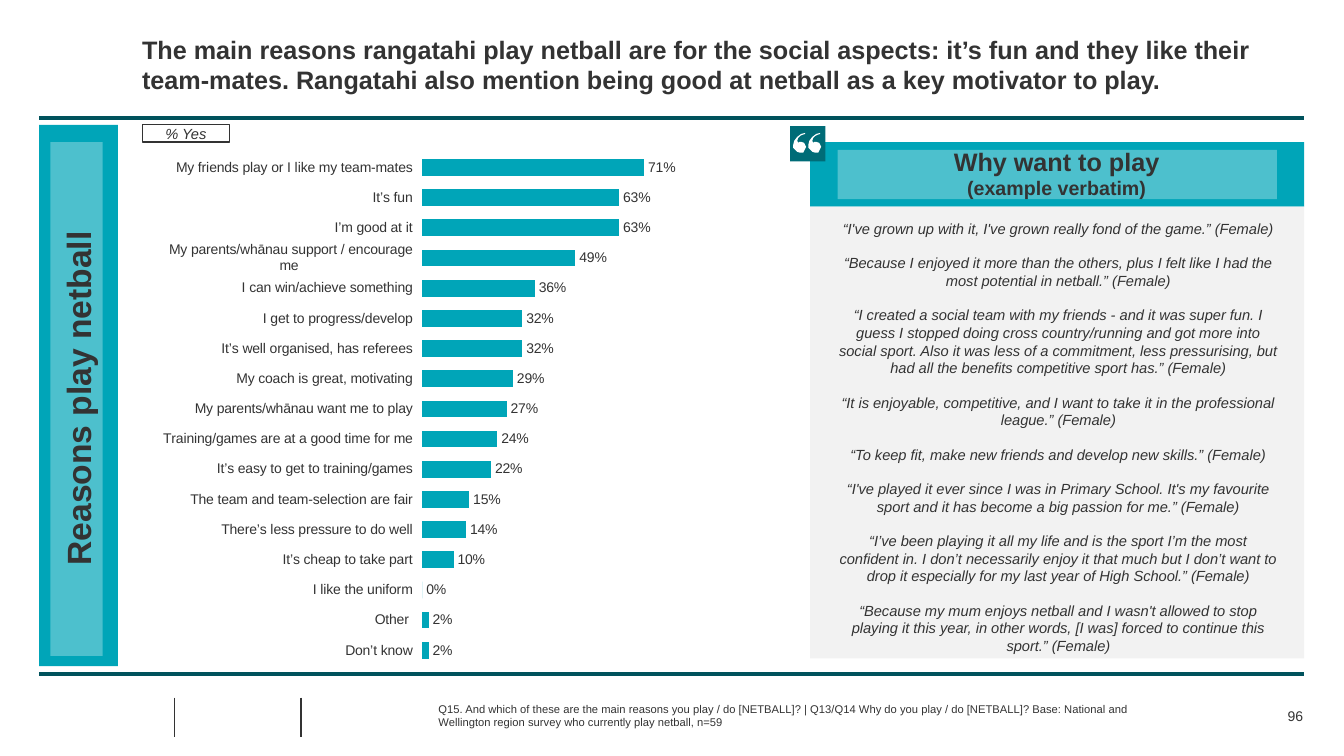
from dataclasses import dataclass
from typing import Any

from lxml import etree
from pptx import Presentation
from pptx.chart.data import CategoryChartData
from pptx.dml.color import RGBColor
from pptx.enum.chart import XL_CHART_TYPE, XL_LABEL_POSITION, XL_TICK_LABEL_POSITION, XL_TICK_MARK
from pptx.enum.shapes import MSO_CONNECTOR, MSO_SHAPE
from pptx.enum.text import MSO_ANCHOR, PP_ALIGN
from pptx.oxml import parse_xml
from pptx.oxml.ns import nsdecls, qn
from pptx.util import Cm, Pt

RECT = MSO_SHAPE.RECTANGLE
STRAIGHT = MSO_CONNECTOR.STRAIGHT
TOP, MIDDLE = MSO_ANCHOR.TOP, MSO_ANCHOR.MIDDLE
LEFT, CENTER, RIGHT = PP_ALIGN.LEFT, PP_ALIGN.CENTER, PP_ALIGN.RIGHT

FONT = "Arial"
HUES = {"ink": "333333", "teal": "00A5B8", "dark": "00525C", "badge": "006C77",
        "panel": "F2F2F2", "white": "FFFFFF"}


@dataclass
class Box:
    x: float
    y: float
    w: float
    h: float
    fill: str = ""
    alpha: int = 100


@dataclass
class Rule:
    x1: float
    y1: float
    x2: float
    y2: float
    hue: str
    width: float


@dataclass
class Line:
    text: str
    size: float
    bold: bool = False
    italic: bool = False


@dataclass
class Label:
    box: Box
    lines: list[Line]
    align: Any = CENTER
    anchor: Any = TOP
    gap: float = 0
    turn: int = 0


RULES = [
    Rule(0.99, 16.99, 32.87, 16.99, "dark", 3),
    Rule(0.99, 2.97, 32.87, 2.97, "dark", 3),
    Rule(4.39, 17.58, 4.39, 18.57, "ink", 1),
    Rule(7.59, 17.58, 7.59, 18.57, "ink", 1),
]
PANELS = [
    Box(20.42, 3.58, 12.45, 1.63, "teal"),
    Box(21.11, 3.78, 11.07, 1.24, "white", 30),
    Box(0.99, 3.15, 1.98, 13.64, "teal"),
    Box(1.27, 3.58, 1.32, 12.95, "white", 30),
    Box(20.42, 5.21, 12.45, 11.38, "panel"),
]
TITLE = Label(
    Box(3.58, 0.86, 29.29, 1.12),
    [Line("The main reasons rangatahi play netball are for the social aspects: it’s fun and "
          "they like their team-mates. Rangatahi also mention being good at netball as a key "
          "motivator to play.", 18, bold=True)], LEFT)
QUOTES = [
    "“I've grown up with it, I've grown really fond of the game.” (Female)",
    "“Because I enjoyed it more than the others, plus I felt like I had the most potential in "
    "netball.” (Female)",
    "“I created a social team with my friends - and it was super fun. I guess I stopped doing "
    "cross country/running and got more into social sport. Also it was less of a commitment, "
    "less pressurising, but had all the benefits competitive sport has.” (Female)",
    "“It is enjoyable, competitive, and I want to take it in the professional league.” (Female)",
    "“To keep fit, make new friends and develop new skills.” (Female)",
    "“I've played it ever since I was in Primary School. It's my favourite sport and it has "
    "become a big passion for me.” (Female)",
    "“I’ve been playing it all my life and is the sport I’m the most confident in. I don’t "
    "necessarily enjoy it that much but I don’t want to drop it especially for my last year of "
    "High School.” (Female)",
    "“Because my mum enjoys netball and I wasn't allowed to stop playing it this year, in other "
    "words, [I was] forced to continue this sport.” (Female)",
]
LABELS = [
    Label(Box(-2.41, 9.53, 8.74, 1.02), [Line("Reasons play netball", 24, bold=True)], turn=270),
    Label(Box(22.25, 3.68, 8.76, 1.37),
          [Line("Why want to play", 18, bold=True), Line("(example verbatim)", 14, bold=True)]),
    Label(Box(21.11, 5.54, 11.13, 10.69), [Line(q, 10.5, italic=True) for q in QUOTES], gap=12),
    Label(Box(11.05, 17.75, 18.75, 0.56),
          [Line("Q15. And which of these are the main reasons you play / do [NETBALL]? | Q13/Q14 "
                "Why do you play / do [NETBALL]? Base: National and Wellington region survey who "
                "currently play netball, n=59", 8)], LEFT, MIDDLE),
    Label(Box(30.15, 17.75, 2.69, 0.56), [Line("96", 10)], RIGHT, MIDDLE),
]
KEY = Label(Box(3.58, 3.15, 2.21, 0.43), [Line("% Yes", 10.5, italic=True)])
REASONS = {
    "My friends play or I like my team-mates": 0.71,
    "It’s fun": 0.63,
    "I’m good at it": 0.63,
    "My parents/whānau support / encourage me ": 0.49,
    "I can win/achieve something": 0.36,
    "I get to progress/develop": 0.32,
    "It’s well organised, has referees": 0.32,
    "My coach is great, motivating": 0.29,
    "My parents/whānau want me to play": 0.27,
    "Training/games are at a good time for me": 0.24,
    "It’s easy to get to training/games": 0.22,
    "The team and team-selection are fair": 0.15,
    "There’s less pressure to do well": 0.14,
    "It’s cheap to take part": 0.1,
    "I like the uniform": 0,
    "Other ": 0.02,
    "Don’t know": 0.02,
}
PLOT = {"x": 0.42, "y": 0, "w": 0.51, "h": 1}
MARK = [(8, 9), (6, 9), (5, 10), (4, 8), (5, 5), (7, 3), (9, 1.5), (12, 1), (12, 0), (8, 1),
        (4, 4), (1, 8), (0, 12), (0.5, 15), (2, 17), (4, 19), (7, 20), (9.5, 19.5), (11, 18),
        (12.5, 16), (13, 14), (12.5, 12), (11, 10)]


def tint(name: str) -> RGBColor:
    return RGBColor.from_string(HUES[name])


def area(box: Box) -> tuple:
    return Cm(box.x), Cm(box.y), Cm(box.w), Cm(box.h)


def paint(shape: Any, hue: str) -> None:
    shape.shadow.inherit = False
    shape.fill.solid()
    shape.fill.fore_color.rgb = tint(hue)
    shape.line.fill.background()


def style(font: Any, size: float) -> None:
    font.name, font.size = FONT, Pt(size)
    font.color.rgb = tint("ink")


def write(shape: Any, label: Label) -> None:
    frame = shape.text_frame
    frame.word_wrap = True
    frame.vertical_anchor = label.anchor
    frame.margin_left = frame.margin_right = frame.margin_top = frame.margin_bottom = 0
    for num, line in enumerate(label.lines):
        para = frame.add_paragraph() if num else frame.paragraphs[0]
        para.alignment = label.align
        para.space_before = Pt(label.gap if num else 0)
        run = para.add_run()
        run.text = line.text
        style(run.font, line.size)
        run.font.bold, run.font.italic = line.bold, line.italic


def draw_rule(shapes: Any, rule: Rule) -> None:
    link = shapes.add_connector(STRAIGHT, Cm(rule.x1), Cm(rule.y1), Cm(rule.x2), Cm(rule.y2))
    link.line.color.rgb = tint(rule.hue)
    link.line.width = Pt(rule.width)
    etree.SubElement(link._element.spPr, qn("a:effectLst"))


def draw_panel(shapes: Any, box: Box) -> None:
    shape = shapes.add_shape(RECT, *area(box))
    paint(shape, box.fill)
    if box.alpha < 100:
        clr = shape._element.spPr.find(".//" + qn("a:srgbClr"))
        etree.SubElement(clr, qn("a:alpha")).set("val", str(box.alpha * 1000))


def draw_label(shapes: Any, label: Label) -> None:
    shape = shapes.add_textbox(*area(label.box))
    shape.rotation = label.turn
    write(shape, label)


def draw_key(shapes: Any) -> None:
    shape = shapes.add_shape(RECT, *area(KEY.box))
    shape.shadow.inherit = False
    shape.fill.background()
    shape.line.color.rgb = tint("ink")
    shape.line.width = Pt(0.75)
    write(shape, KEY)


def draw_badge(shapes: Any) -> None:
    """Draw the dark square with its pair of quote marks."""
    group = shapes.add_group_shape().shapes
    draw_panel(group, Box(19.91, 3.18, 0.89, 0.89, "badge"))
    for left in (19.99, 20.37):
        pen = group.build_freeform(*MARK[0], scale=Cm(1) / 40)
        pen.add_line_segments(MARK[1:])
        paint(pen.convert_to_shape(Cm(left), Cm(3.35)), "white")


def draw_chart(shapes: Any) -> None:
    data = CategoryChartData(number_format="0%")
    data.categories = list(REASONS)
    data.add_series("Series 1", list(REASONS.values()))
    spot = area(Box(4.11, 3.84, 15.49, 12.93))
    chart = shapes.add_chart(XL_CHART_TYPE.BAR_CLUSTERED, *spot, data).chart
    style(chart.font, 12)
    chart.has_legend = chart.has_title = False

    cats, vals = chart.category_axis, chart.value_axis
    cats.reverse_order = True
    cats.major_tick_mark = XL_TICK_MARK.OUTSIDE
    cats.tick_label_position = XL_TICK_LABEL_POSITION.LOW
    cats.format.line.fill.background()
    style(cats.tick_labels.font, 10)
    vals.minimum_scale, vals.maximum_scale = 0, 1
    vals.has_major_gridlines = vals.visible = False

    plot = chart.plots[0]
    plot.gap_width, plot.overlap = 80, -10
    plot.vary_by_categories = False
    bars = plot.series[0]
    bars.format.fill.solid()
    bars.format.fill.fore_color.rgb = tint("teal")
    tags = bars.data_labels
    tags.show_value = True
    tags.number_format, tags.number_format_is_linked = "0%", False
    tags.position = XL_LABEL_POSITION.OUTSIDE_END
    style(tags.font, 10)

    region = chart._chartSpace.chart.plotArea
    for old in region.findall(qn("c:layout")):
        region.remove(old)
    modes = '<c:layoutTarget val="inner"/><c:xMode val="edge"/><c:yMode val="edge"/>'
    sizes = "".join(f'<c:{key} val="{val}"/>' for key, val in PLOT.items())
    region.insert(0, parse_xml(f'<c:layout {nsdecls("c")}><c:manualLayout>{modes}{sizes}'
                               "</c:manualLayout></c:layout>"))


def main() -> None:
    deck = Presentation()
    deck.slide_width, deck.slide_height = Cm(33.87), Cm(19.05)
    shapes = deck.slides.add_slide(deck.slide_layouts[5]).shapes
    head = shapes.title
    head.left, head.top, head.width, head.height = area(TITLE.box)
    write(head, TITLE)
    for rule in RULES:
        draw_rule(shapes, rule)
    draw_chart(shapes)
    for box in PANELS:
        draw_panel(shapes, box)
    draw_badge(shapes)
    for label in LABELS:
        draw_label(shapes, label)
    draw_key(shapes)
    deck.save("out.pptx")


if __name__ == "__main__":
    main()
